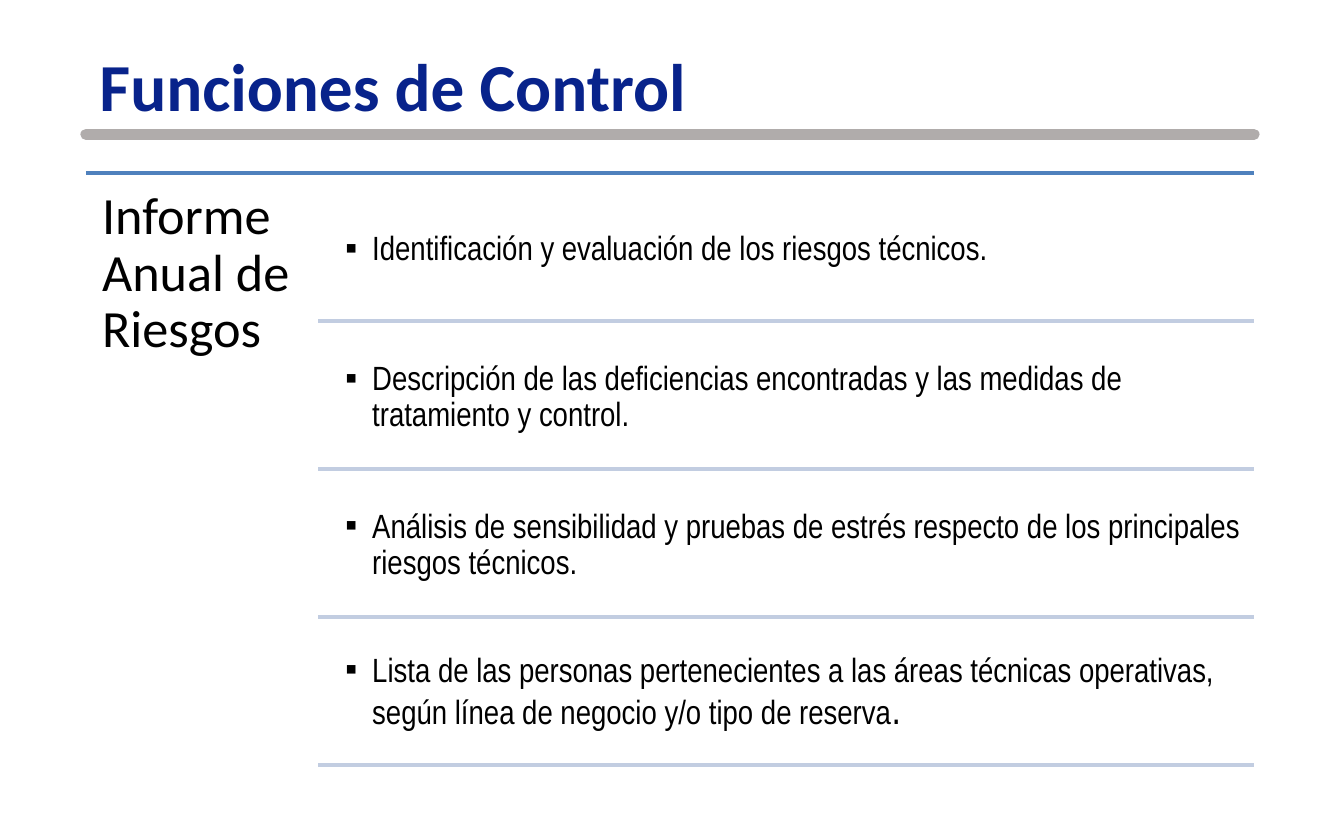
from dataclasses import dataclass

from lxml.etree import SubElement as Sub
from pptx import Presentation
from pptx.dml.color import RGBColor as RGB
from pptx.enum.shapes import MSO_CONNECTOR as Conn
from pptx.enum.text import MSO_ANCHOR as Anchor, MSO_AUTO_SIZE as Fit, PP_ALIGN as Align
from pptx.oxml.ns import qn
from pptx.util import Inches, Pt


@dataclass(frozen=True)
class Theme:
    navy: RGB = RGB.from_string("08238B")
    gray: RGB = RGB.from_string("B0ACAB")
    blue: RGB = RGB.from_string("4F81BD")
    pale: RGB = RGB.from_string("C2CDE1")
    black: RGB = RGB.from_string("000000")
    head: str = "Calibri"
    body: str = "Arial Narrow"
    title: int = 36
    topic: int = 28
    item: int = 18
    stop: int = 22


THEME = Theme()
LEFT, RIGHT = 0.64, 9.33
TOP = 1.29
STEP = 1.1  # distance between item rows
ROW_H = 1.04
ITEMS = [
    "Identificación y evaluación de los riesgos técnicos.",
    "Descripción de las deficiencias encontradas y las medidas de tratamiento y control.",
    "Análisis de sensibilidad y pruebas de estrés respecto de los principales riesgos técnicos.",
    "Lista de las personas pertenecientes a las áreas técnicas operativas, "
    "según línea de negocio y/o tipo de reserva",
]


def style(run, font, size, color=THEME.black, bold=False):
    run.font.name = font
    run.font.size = Pt(size)
    run.font.color.rgb = color
    run.font.bold = bold


def place(shape, left, top, width, height):
    shape.left, shape.top = Inches(left), Inches(top)
    shape.width, shape.height = Inches(width), Inches(height)


def add_title(slide, text):
    title = slide.shapes.title
    place(title, LEFT, 0.28, 8.7, 0.71)
    frame = title.text_frame
    frame.text = text
    frame.auto_size = Fit.NONE
    frame.vertical_anchor = Anchor.TOP
    para = frame.paragraphs[0]
    para.alignment = Align.LEFT
    style(para.runs[0], THEME.head, THEME.title, THEME.navy, True)


def add_rule(slide, left, top, color, width, cap="flat"):
    rule = slide.shapes.add_connector(
        Conn.STRAIGHT, Inches(left), Inches(top), Inches(RIGHT), Inches(top))
    rule.line.color.rgb = color
    rule.line.width = Pt(width)
    props = rule._element.spPr
    props.find(qn("a:ln")).set("cap", cap)
    Sub(props, qn("a:effectLst"))


def add_text(slide, text, box, inset, font, size, anchor=Anchor.TOP):
    shape = slide.shapes.add_textbox(*map(Inches, box))
    frame = shape.text_frame
    frame.word_wrap = True
    frame.vertical_anchor = anchor
    frame.margin_left = frame.margin_right = Inches(inset)
    frame.margin_top = frame.margin_bottom = Inches(inset)
    frame.text = text
    para = frame.paragraphs[0]
    para.line_spacing = 0.9
    style(para.runs[0], font, size)
    return para


def add_bullet(para):
    props = para._p.get_or_add_pPr()
    props.set("marL", str(Inches(0.2)))
    props.set("indent", str(-Inches(0.2)))
    Sub(props, qn("a:buFont")).set("typeface", THEME.head)
    Sub(props, qn("a:buChar")).set("char", "▪")


def add_item(slide, text, top):
    para = add_text(slide, text, (2.5, top, 6.83, ROW_H), 0.07,
                    THEME.body, THEME.item, Anchor.MIDDLE)
    add_bullet(para)
    add_rule(slide, 2.37, top + ROW_H + 0.01, THEME.pale, 2)
    return para


def main():
    deck = Presentation()
    deck.slide_width, deck.slide_height = Inches(10), Inches(6.25)
    slide = deck.slides.add_slide(deck.slide_layouts[5])

    # Heading
    add_title(slide, "Funciones de Control")
    add_rule(slide, LEFT, 1, THEME.gray, 6, "rnd")

    # Topic column
    add_rule(slide, LEFT, TOP, THEME.blue, 2)
    add_text(slide, "Informe Anual de Riesgos", (LEFT, TOP, 1.74, 4.44), 0.12,
             THEME.head, THEME.topic)

    # Item rows
    for row, text in enumerate(ITEMS):
        para = add_item(slide, text, TOP + 0.05 + row * STEP)

    # The last item closes with a larger full stop
    stop = para.add_run()
    stop.text = "."
    style(stop, THEME.body, THEME.stop)

    deck.save("out.pptx")


if __name__ == "__main__":
    main()
